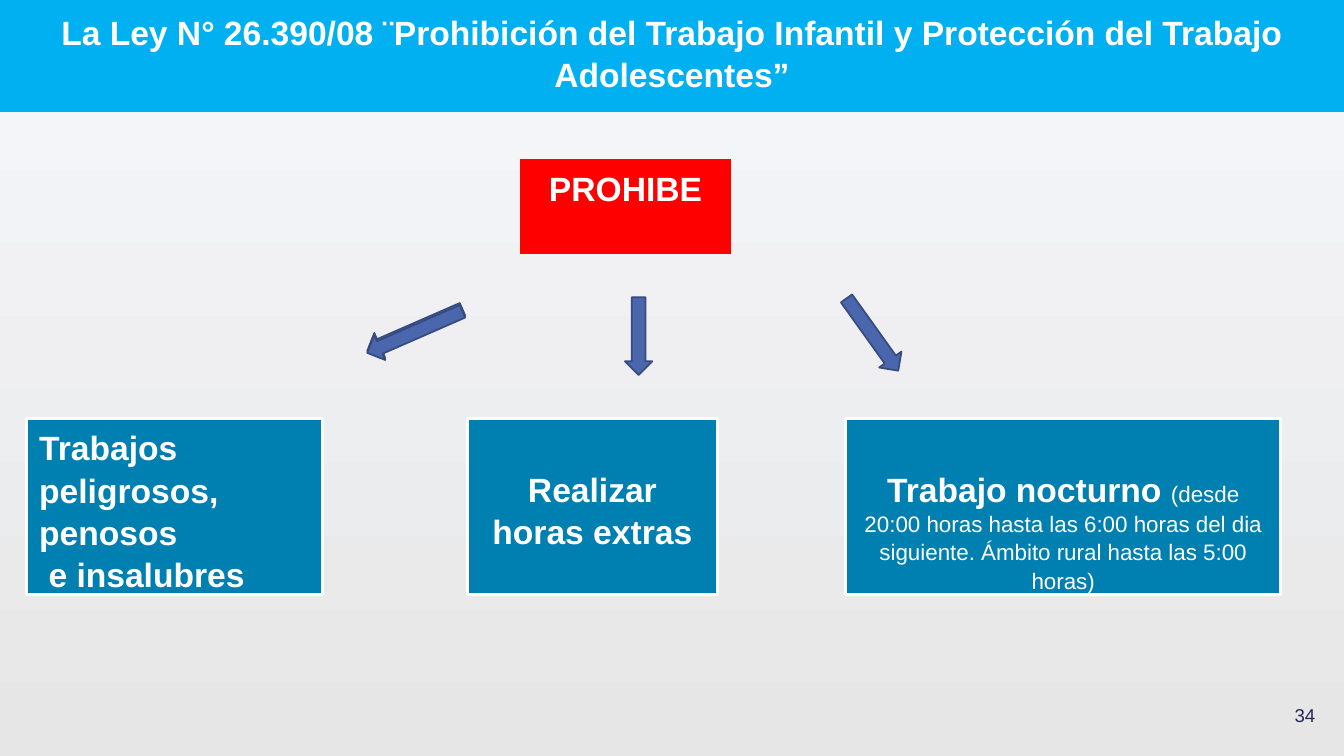
import pptx
import pptx.dml.color
import pptx.enum.shapes
import pptx.enum.text
import pptx.util
from dataclasses import dataclass

Cm = pptx.util.Cm
Pt = pptx.util.Pt
MSO_SHAPE = pptx.enum.shapes.MSO_SHAPE
ANCHOR = pptx.enum.text.MSO_ANCHOR
ALIGN = pptx.enum.text.PP_ALIGN


@dataclass(frozen=True)
class Theme:
    """Colours, font and type sizes of the slide."""
    font: str = "Arial"
    white: str = "FFFFFF"
    ink: str = "242852"
    banner: str = "00B0F0"
    alert: str = "FF0000"
    card: str = "007FB1"
    arrow: str = "4A66AC"
    arrow_edge: str = "374B7F"
    sky: str = "F6F7FB"
    ground: str = "E6E6E6"
    heading: float = 24
    detail: float = 16
    number: float = 13.3


THEME = Theme()
INSETS = (0.33, 0.18, 0.33, 0.18)
EVEN_INSETS = (0.25, 0.25, 0.25, 0.25)
LOWERED_INSETS = (0.33, 1.22, 0.33, 0.18)


def rgb(value):
    """Return a colour from its hex value."""
    return pptx.dml.color.RGBColor.from_string(value)


def apply(obj, formats):
    """Set each attribute named in formats."""
    for name, value in formats.items():
        setattr(obj, name, value)


def place(sp, box):
    """Move a shape to a box given in centimetres."""
    apply(sp, dict(zip(("left", "top", "width", "height"), map(Cm, box))))


def paint(sp, fill, edge=None, weight=0):
    """Give a shape a solid fill and an optional outline."""
    sp.fill.solid()
    sp.fill.fore_color.rgb = rgb(fill)
    if edge:
        sp.line.color.rgb = rgb(edge)
        sp.line.width = Pt(weight)
    else:
        sp.line.fill.background()


def write(sp, paragraphs, align, insets=INSETS, anchor=ANCHOR.TOP, color=THEME.white):
    """Fill a shape with paragraphs of (text, size, bold) runs."""
    tf = sp.text_frame
    sides = ("margin_left", "margin_top", "margin_right", "margin_bottom")
    apply(tf, {"word_wrap": True, "auto_size": pptx.enum.text.MSO_AUTO_SIZE.NONE,
               "vertical_anchor": anchor, **dict(zip(sides, map(Cm, insets)))})
    for i, runs in enumerate(paragraphs):
        p = tf.paragraphs[0] if i == 0 else tf.add_paragraph()
        apply(p, {"alignment": align, "line_spacing": 1.05,
                  "space_before": Pt(0), "space_after": Pt(0)})
        for text, size, bold in runs:
            r = p.add_run()
            r.text = text
            apply(r.font, {"name": THEME.font, "size": Pt(size), "bold": bold})
            r.font.color.rgb = rgb(color)


def add_preset(s, preset, box, fill, edge=None, weight=0):
    """Add a flat preset shape."""
    sp = s.shapes.add_shape(preset, *map(Cm, box))
    sp.shadow.inherit = False
    paint(sp, fill, edge, weight)
    return sp


def add_background(s):
    """Shade the slide from top to bottom."""
    fill = s.background.fill
    fill.gradient()
    fill.gradient_angle = 270
    for stop, color, position in zip(fill.gradient_stops, (THEME.sky, THEME.ground), (0.03, 1)):
        stop.color.rgb = rgb(color)
        stop.position = position


def add_banner(s, box):
    """Set the title across the top band."""
    sp = s.shapes.title
    place(sp, box)
    paint(sp, THEME.banner)
    title = ("La Ley N° 26.390/08 ¨Prohibición del Trabajo Infantil "
             "y Protección del Trabajo Adolescentes”")
    write(sp, [[(title, THEME.heading, True)]], ALIGN.CENTER, EVEN_INSETS)


def add_page_number(s, box):
    """Write the page number in its corner."""
    sp = s.shapes.add_textbox(*map(Cm, box))
    write(sp, [[("34", THEME.number, False)]], ALIGN.RIGHT, EVEN_INSETS,
          ANCHOR.MIDDLE, THEME.ink)


def add_root(s, box):
    """Add the box that heads the diagram."""
    sp = add_preset(s, MSO_SHAPE.RECTANGLE, box, THEME.alert)
    write(sp, [[("PROHIBE", THEME.heading, True)]], ALIGN.CENTER)


def add_cards(s, box):
    """Add the three prohibited kinds of work along a row."""
    left, top, _, height = box
    big = THEME.heading
    cards = (
        (0, 7.47, ALIGN.JUSTIFY, INSETS,
         [[("Trabajos peligrosos, penosos", big, True)], [(" e insalubres", big, True)]]),
        (11.12, 6.3, ALIGN.CENTER, LOWERED_INSETS,
         [[("Realizar horas extras", big, True)]]),
        (20.65, 10.97, ALIGN.CENTER, LOWERED_INSETS,
         [[("Trabajo nocturno ", big, True),
           ("(desde 20:00 horas hasta las 6:00 horas del dia siguiente. "
            "Ámbito rural hasta las 5:00 horas)", THEME.detail, False)]]),
    )
    for dx, width, align, insets, paragraphs in cards:
        sp = add_preset(s, MSO_SHAPE.RECTANGLE, (left + dx, top, width, height),
                        THEME.card, THEME.white, 2)
        write(sp, paragraphs, align, insets)


def add_arrows(s, box):
    """Add the arrows that lead from the root to the cards."""
    left, top, _, _ = box
    arrows = ((0, 0, 2.62, 66.4), (0, 0.05, 2.62, 66.4),
              (5.64, 0.48, 1.96, 0), (11.53, 0.3, 2.24, 324.4))
    for dx, dy, length, angle in arrows:
        sp = add_preset(s, MSO_SHAPE.DOWN_ARROW, (left + dx, top + dy, 0.69, length),
                        THEME.arrow, THEME.arrow_edge, 1.25)
        sp.rotation = angle


def main():
    """Build and save the slide."""
    prs = pptx.Presentation()
    apply(prs, {"slide_width": Cm(33.87), "slide_height": Cm(19.05)})
    s = prs.slides.add_slide(prs.slide_layouts[5])
    add_background(s)
    add_banner(s, (0, 0, 33.87, 2.82))
    add_page_number(s, (31.37, 17.27, 2.03, 1.45))
    add_root(s, (13.11, 4.01, 5.31, 2.39))
    add_cards(s, (0.66, 10.54, 31.62, 4.45))
    add_arrows(s, (10.11, 7.01, 12.22, 2.67))
    prs.save("out.pptx")


if __name__ == "__main__":
    main()
